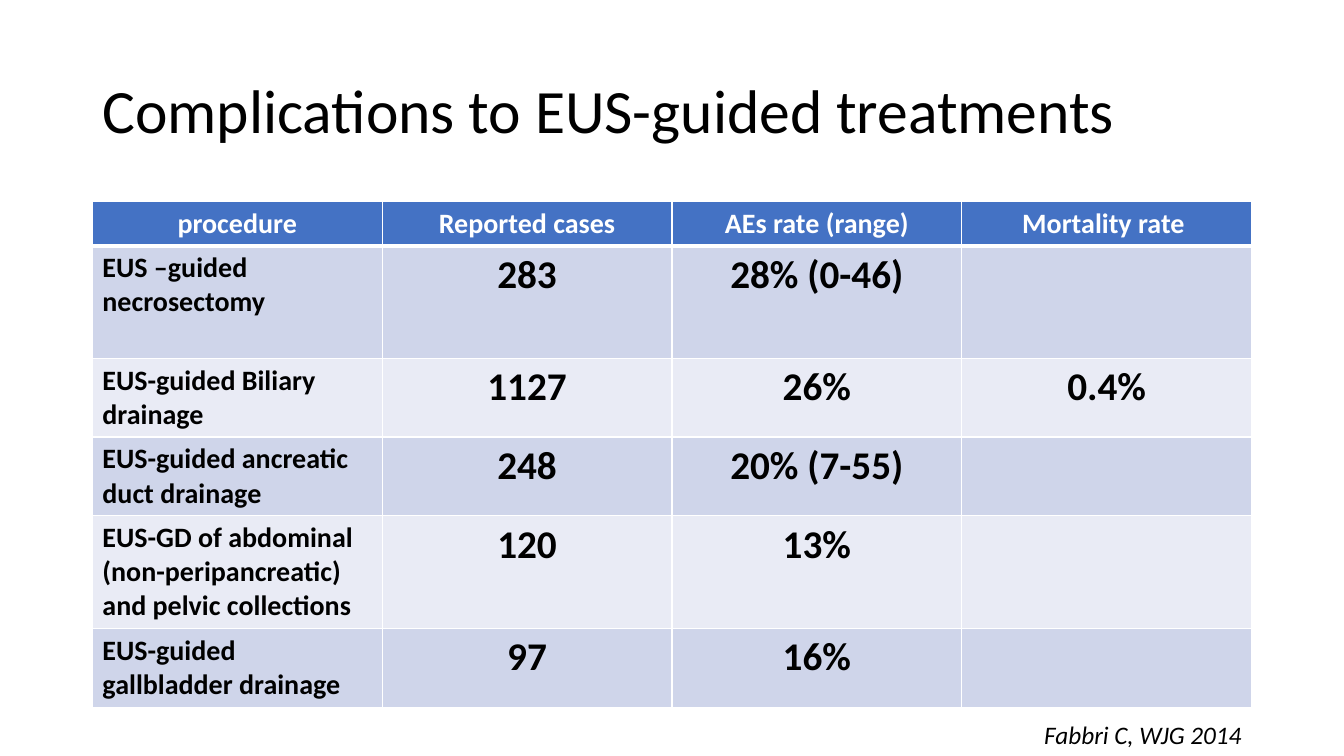
from lxml.etree import SubElement
from pptx import Presentation
from pptx.dml.color import RGBColor
from pptx.enum.text import MSO_ANCHOR as Anchor, PP_ALIGN as Align
from pptx.oxml.ns import qn
from pptx.util import Pt

LEFT, WIDTH = 66, 828
HEADERS = ["procedure", "Reported cases", "AEs rate (range)", "Mortality rate "]
PROCEDURES = [
    ["EUS –guided necrosectomy", "283", "28% (0-46)", ""],
    ["EUS-guided Biliary drainage", "1127", "26%", "0.4%"],
    ["EUS-guided ancreatic duct drainage", "248", "20% (7-55)", ""],
    ["EUS-GD of abdominal (non-peripancreatic) and pelvic collections", "120", "13%", ""],
    ["EUS-guided gallbladder drainage", "97", "16%", ""],
]
ROW_HEIGHTS = [31.5, 80.5, 56.2, 56.2, 80.7, 56.2]
HEADER_FILL, BANDS = "4472C4", ["CFD5EA", "E9EBF5"]


def color(value):
    return RGBColor.from_string(value)


def write(frame, text, size=20, ink="000000", bold=False, italic=False,
          align=Align.LEFT, spacing=1.0):
    para = frame.paragraphs[0]
    para.alignment, para.line_spacing = align, spacing
    if text:
        span = para.add_run()
        span.text = text
        font = span.font
        font.name, font.size = "Calibri", Pt(size)
        font.bold, font.italic = bold, italic
        font.color.rgb = color(ink)


def add_text(page, left, top, width, height, text, anchor=Anchor.TOP, wrap=True, **style):
    box = page.shapes.add_textbox(Pt(left), Pt(top), Pt(width), Pt(height))
    box.text_frame.word_wrap = wrap
    box.text_frame.vertical_anchor = anchor
    write(box.text_frame, text, **style)


def add_borders(cell, top, bottom):
    properties = cell._tc.get_or_add_tcPr()
    for side, width in [("L", 1), ("R", 1), ("T", top), ("B", bottom)]:
        line = SubElement(properties, qn(f"a:ln{side}"), w=str(Pt(width)))
        fill = SubElement(line, qn("a:solidFill"))
        SubElement(fill, qn("a:srgbClr"), val="FFFFFF")


def fill_cell(cell, text, fill, top=1, bottom=1, **style):
    add_borders(cell, top, bottom)
    cell.fill.solid()
    cell.fill.fore_color.rgb = color(fill)
    write(cell.text_frame, text, bold=True, **style)


def add_complications_table(page, top):
    frame = page.shapes.add_table(len(ROW_HEIGHTS), len(HEADERS), Pt(LEFT), Pt(top),
                                  Pt(WIDTH), Pt(sum(ROW_HEIGHTS)))
    table = frame.table
    for row, height in zip(table.rows, ROW_HEIGHTS):
        row.height = Pt(height)
    for column, header in enumerate(HEADERS):
        fill_cell(table.cell(0, column), header, HEADER_FILL, bottom=3,
                  ink="FFFFFF", align=Align.CENTER)
    for index, values in enumerate(PROCEDURES):
        for column, value in enumerate(values):
            style = {"size": 28, "align": Align.CENTER} if column else {}
            fill_cell(table.cell(index + 1, column), value, BANDS[index % 2],
                      top=1 if index else 3, **style)


def main():
    deck = Presentation()
    deck.slide_width, deck.slide_height = Pt(960), Pt(540)
    page = deck.slides.add_slide(deck.slide_layouts[6])
    add_text(page, LEFT, 28.75, WIDTH, 104.4, "Complications to EUS-guided treatments",
             anchor=Anchor.MIDDLE, size=44, spacing=0.9)
    add_complications_table(page, 144)
    add_text(page, 737, 510, 157, 29, "Fabbri C, WJG 2014", wrap=False,
             size=18, italic=True, align=Align.RIGHT)
    deck.save("out.pptx")


if __name__ == "__main__":
    main()
